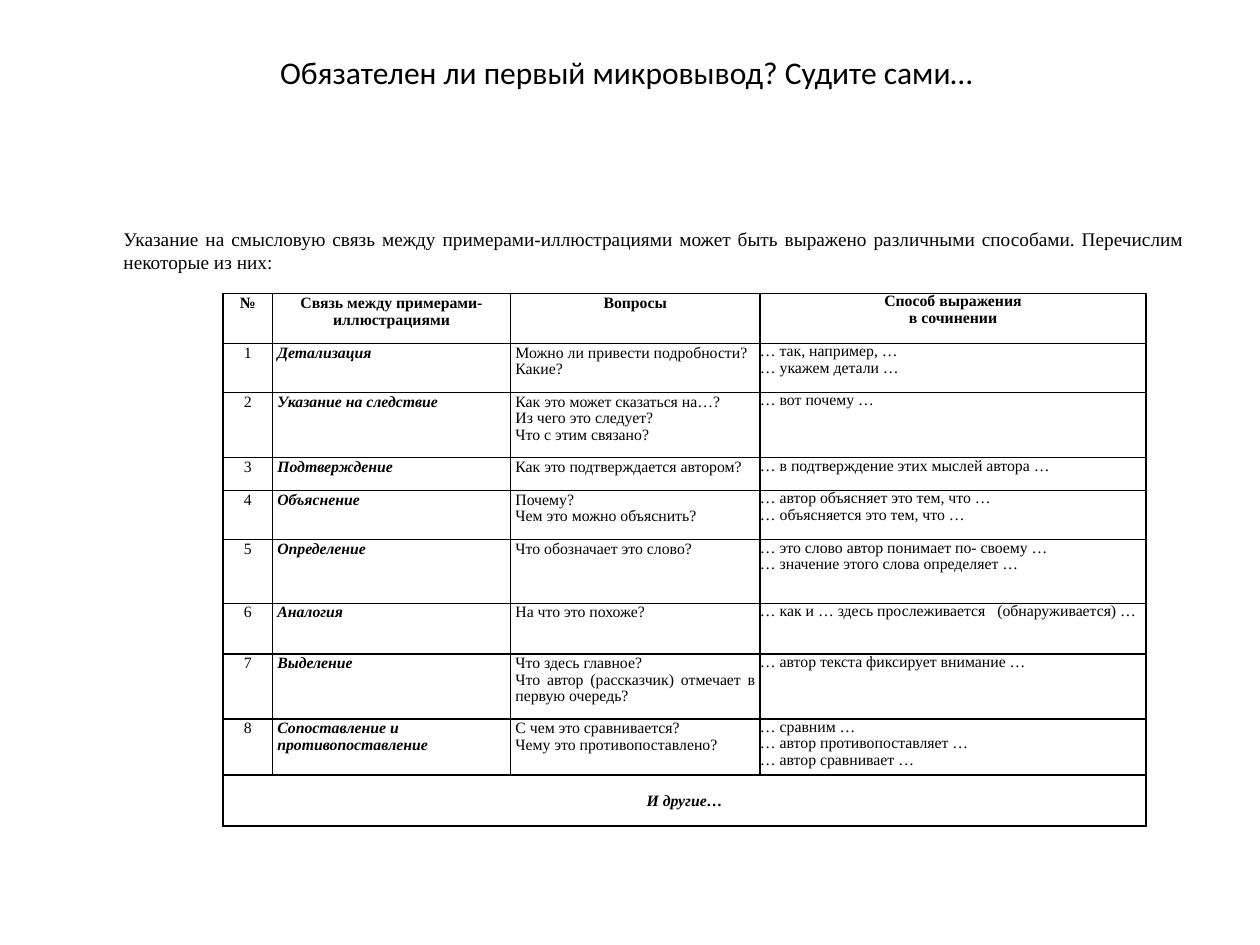
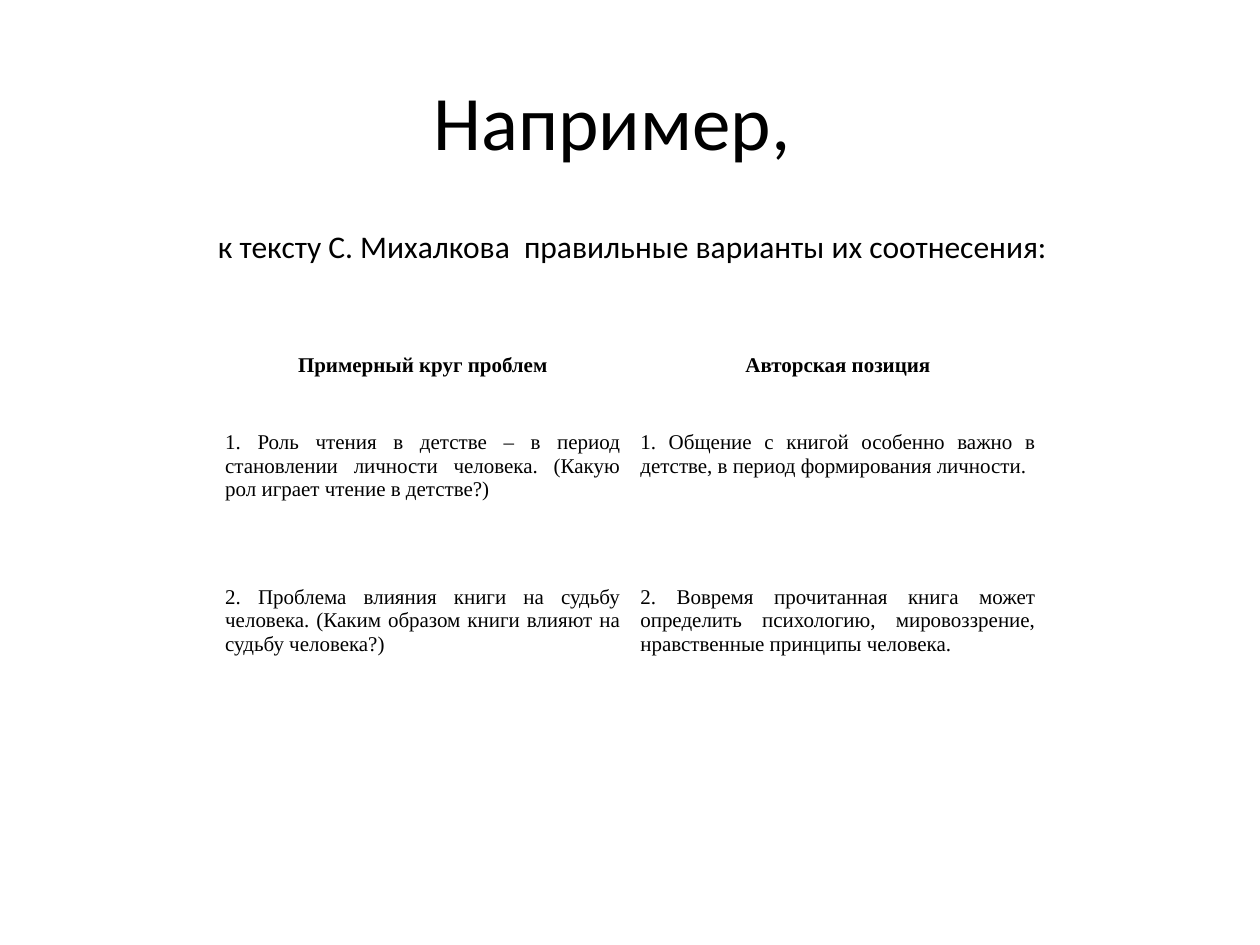
from lxml import etree
from pptx import Presentation
from pptx import util as u
from pptx.dml.color import RGBColor
from pptx.enum import text
from pptx.oxml import ns

COLORS = {"ink": "000000", "paper": "FFFFFF"}
SANS, SERIF = "Calibri", "Times New Roman"
NO_GRID = "{2D5ABB26-0587-4C30-8999-92F81FD0307C}"
LEFT, CENTER, JUSTIFY = (text.PP_ALIGN.LEFT, text.PP_ALIGN.CENTER,
                         text.PP_ALIGN.JUSTIFY)
TOP, MIDDLE = text.MSO_ANCHOR.TOP, text.MSO_ANCHOR.MIDDLE

LINKS_TITLE = "Обязателен ли первый микровывод? Судите сами… "
LINKS_INTRO = ("Указание на смысловую связь между примерами-иллюстрациями может быть "
               "выражено различными способами. Перечислим некоторые из них:")
LINKS_HEADER = ("№", "Связь между примерами-иллюстрациями", "Вопросы",
                "Способ выражения\nв сочинении")
LINKS = [
    ("Детализация", "Можно ли привести подробности?\nКакие?",
     "… так, например, …\n… укажем детали …"),
    ("Указание на следствие",
     "Как это может сказаться на…?\nИз чего это следует?\nЧто с этим связано?",
     "… вот почему …"),
    ("Подтверждение", "Как это подтверждается автором?",
     "… в подтверждение этих мыслей автора …"),
    ("Объяснение", "Почему?\nЧем это можно объяснить?",
     "… автор объясняет это тем, что …\n… объясняется это тем, что …"),
    ("Определение", "Что обозначает это слово?",
     "… это слово автор понимает по- своему …\n… значение этого слова определяет …"),
    ("Аналогия", "На что это похоже?",
     "… как и … здесь прослеживается   (обнаруживается) …"),
    ("Выделение",
     "Что здесь главное?\nЧто автор (рассказчик) отмечает в первую очередь?",
     "… автор текста фиксирует внимание …"),
    ("Сопоставление и противопоставление",
     "С чем это сравнивается?\nЧему это противопоставлено?",
     "… сравним …\n… автор противопоставляет …\n… автор сравнивает …"),
]
LINKS_FOOTER = "И другие…"
LINKS_COLS = (0.99, 4.8, 5.03, 7.78)
LINKS_ROWS = (1, 0.99, 1.32, 0.66, 0.99, 1.28, 1.02, 1.31, 1.13, 1.03)
THIN_LINES = range(1, 7)

EXAMPLE_TITLE = "Например, "
EXAMPLE_INTRO = "к тексту С. Михалкова  правильные варианты их соотнесения:"
EXAMPLE = [
    ("Примерный круг проблем", "Авторская позиция"),
    ("1. Роль чтения в детстве – в период становлении личности человека. "
     "(Какую рол играет чтение в детстве?)",
     "1. Общение с книгой особенно важно в детстве, в период формирования личности."),
    ("2. Проблема влияния книги на судьбу человека. "
     "(Каким образом книги влияют на судьбу человека?)",
     "2. Вовремя прочитанная книга может определить психологию, мировоззрение, "
     "нравственные принципы человека."),
]
EXAMPLE_COLS = (8.37, 8.37)
EXAMPLE_ROWS = (1.56, 3.12, 3.12)


def write(tf, content, font, size, align, bold=False, italic=False,
          spacing=None, before=0):
    tf.text = content
    for p in tf.paragraphs:
        p.alignment = align
        p.space_before = u.Pt(before)
        if spacing:
            p.line_spacing = spacing
        for r in p.runs:
            r.font.name, r.font.size = font, u.Pt(size)
            r.font.bold, r.font.italic = bold, italic
            r.font.color.rgb = RGBColor.from_string(COLORS["ink"])


def add_slide(prs, title, size, box, anchor, margin_top):
    s = prs.slides.add_slide(prs.slide_layouts[5])
    sp = s.shapes.title
    sp.left, sp.top, sp.width, sp.height = map(u.Cm, box)
    tf = sp.text_frame
    write(tf, title, SANS, size, CENTER)
    tf.auto_size = text.MSO_AUTO_SIZE.NONE
    tf.vertical_anchor, tf.margin_top = anchor, u.Cm(margin_top)
    return s


def add_intro(s, content, font, size, align, indent, before):
    sp = s.shapes.add_textbox(u.Cm(1.27), u.Cm(4.45), u.Cm(22.86), u.Cm(1.4))
    tf = sp.text_frame
    tf.word_wrap = True
    tf.margin_left = u.Cm(0.25 + indent)
    write(tf, content, font, size, align, before=before)


def add_grid(s, left, top, cols, rows):
    frame = s.shapes.add_table(len(rows), len(cols), u.Cm(left), u.Cm(top),
                               u.Cm(sum(cols)), u.Cm(sum(rows)))
    table = frame.table
    table.first_row = table.horz_banding = False
    frame._element.find(".//" + ns.qn("a:tableStyleId")).text = NO_GRID
    for col, width in zip(table.columns, cols):
        col.width = u.Cm(width)
    for row, height in zip(table.rows, rows):
        row.height = u.Cm(height)
    return table


def fill_cell(cell, content, size, align, margins, anchor=TOP, **style):
    (cell.margin_left, cell.margin_top,
     cell.margin_right, cell.margin_bottom) = map(u.Cm, margins)
    cell.vertical_anchor = anchor
    write(cell.text_frame, content, SERIF, size, align, **style)
    cell.fill.solid()
    cell.fill.fore_color.rgb = RGBColor.from_string(COLORS["paper"])


def add_borders(cell, widths):
    tc_pr = cell._tc.get_or_add_tcPr()
    for side, width in zip("LRTB", widths):
        ln = etree.SubElement(tc_pr, ns.qn("a:ln" + side), w=str(u.Pt(width)))
        fill = etree.SubElement(ln, ns.qn("a:solidFill"))
        etree.SubElement(fill, ns.qn("a:srgbClr"), val=COLORS["ink"])


def build_links(prs):
    s = add_slide(prs, LINKS_TITLE, 18, (1.27, 0.76, 22.86, 2.16), TOP, 0.3)
    add_intro(s, LINKS_INTRO, SERIF, 11, JUSTIFY, 0.97, 2.2)
    table = add_grid(s, 4.5, 5.92, LINKS_COLS, LINKS_ROWS)
    last = len(LINKS_ROWS) - 1
    table.cell(last, 0).merge(table.cell(last, len(LINKS_COLS) - 1))
    for y in range(len(LINKS_ROWS)):
        for x in range(len(LINKS_COLS)):
            lines = [0.5 if edge in THIN_LINES else 1 for edge in (y, y + 1)]
            add_borders(table.cell(y, x), [1, 1] + lines)

    body = [(str(n), *link) for n, link in enumerate(LINKS, 1)]
    aligns = (CENTER, LEFT, JUSTIFY, LEFT)
    inner, flush = (0.1, 0.03, 0.1, 0), (0, 0, 0, 0)
    for y, row in enumerate([LINKS_HEADER] + body):
        for x, content in enumerate(row):
            fill_cell(table.cell(y, x), content, 9,
                      CENTER if y == 0 else aligns[x],
                      flush if x == 3 else inner, spacing=0.95,
                      bold=y == 0 or x == 1, italic=y > 0 and x == 1)
    fill_cell(table.cell(last, 0), LINKS_FOOTER, 9, CENTER, inner, MIDDLE,
              spacing=0.95, bold=True, italic=True)


def build_example(prs):
    s = add_slide(prs, EXAMPLE_TITLE, 44, (1.09, 1.32, 22.86, 2.18), MIDDLE, 0.13)
    add_intro(s, EXAMPLE_INTRO, SANS, 18, CENTER, 0.1, 3)
    table = add_grid(s, 4.34, 6.93, EXAMPLE_COLS, EXAMPLE_ROWS)
    for y, row in enumerate(EXAMPLE):
        for x, content in enumerate(row):
            fill_cell(table.cell(y, x), content, 12,
                      JUSTIFY if y else CENTER, (0.2,) * 4, bold=y == 0)


def main():
    prs = Presentation()
    prs.slide_width, prs.slide_height = u.Cm(25.4), u.Cm(19.05)
    build_links(prs)
    build_example(prs)
    prs.save("out.pptx")


if __name__ == "__main__":
    main()
